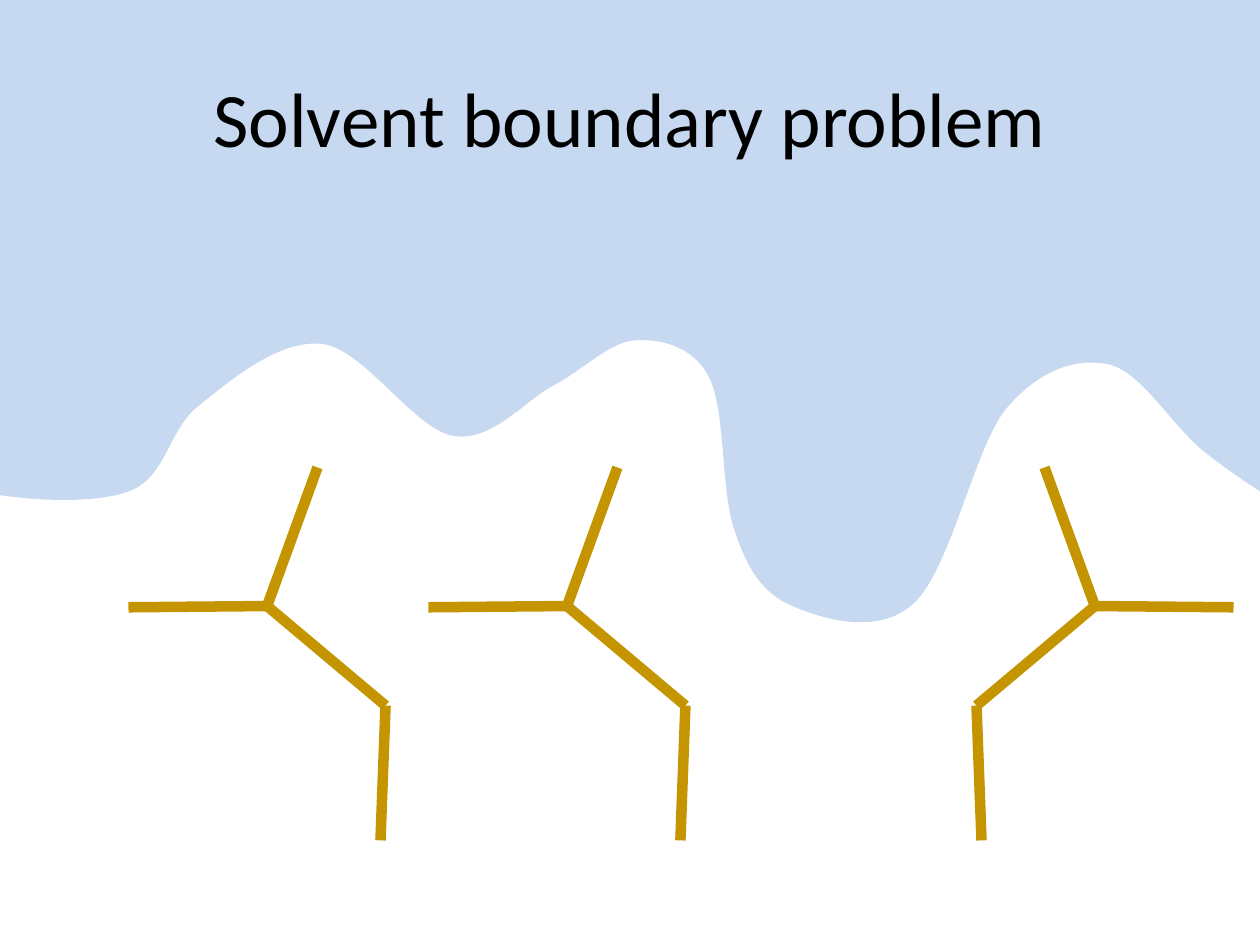
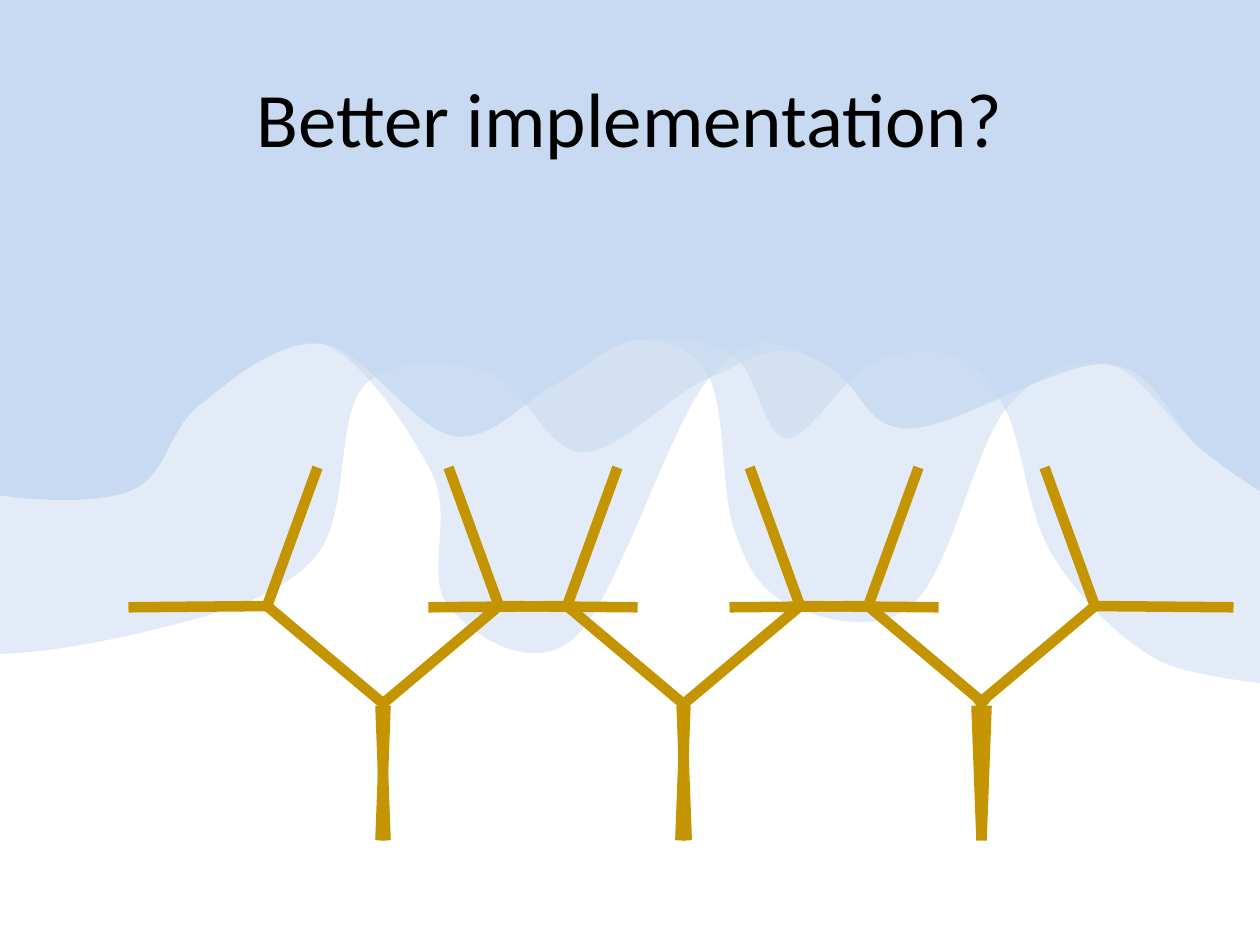
from dataclasses import dataclass

import lxml.etree
import pptx
import pptx.dml.color
import pptx.enum.shapes
import pptx.enum.text
import pptx.oxml.ns
import pptx.util


@dataclass(frozen=True)
class Theme:
    solvent: str = "C6D9F1"
    bond: str = "C49500"
    ink: str = "000000"
    font: str = "Calibri"
    title_size: int = 44
    bond_width: int = 6


THEME = Theme()
COLUMNS, ROWS = 10, 7.5
CELL = pptx.util.Inches(1)

JOINT_ROW = 4.81
TIP, ARM, ELBOW, FOOT = (0.4, -1.1), (-1.1, 0.01), (0.94, 0.79), (0.9, 1.86)
RIGHT_FACING = (2.12, 4.5, 6.89)
LEFT_FACING = (3.96, 6.35, 8.69)

SHORE_START = (0, 3.93)
LOW_SHORE_START = (0, 5.19)
LEFT_SHORE = [
    (0.35, 3.98, 0.78, 3.99, 1.02, 3.9),
    (1.33, 3.79, 1.33, 3.4, 1.59, 3.21),
]
LEFT_HUMPS = [
    (1.84, 3.01, 2.22, 2.69, 2.56, 2.73),
    (2.89, 2.77, 3.29, 3.41, 3.6, 3.46),
    (3.91, 3.51, 4.17, 3.17, 4.41, 3.05),
]
RIGHT_HUMPS = [
    (6.9, 3.09, 6.83, 3.39, 7.21, 3.4),
    (7.59, 3.4, 8.4, 2.86, 8.79, 2.89),
    (9.18, 2.92, 9.28, 3.35, 9.54, 3.57),
]
RIGHT_SHORE = [(9.65, 3.66, 9.83, 3.79, 10, 3.9)]

DIP_AT_RIGHT_GAP = LEFT_SHORE + LEFT_HUMPS + [
    (4.65, 2.92, 4.84, 2.71, 5.05, 2.7),
    (5.25, 2.69, 5.51, 2.75, 5.63, 3),
    (5.76, 3.25, 5.72, 3.9, 5.83, 4.21),
    (5.93, 4.51, 6.05, 4.71, 6.29, 4.81),
    (6.52, 4.91, 6.97, 5.05, 7.25, 4.79),
    (7.54, 4.53, 7.73, 3.57, 7.98, 3.25),
    (8.24, 2.94, 8.53, 2.84, 8.79, 2.89),
    (9.05, 2.94, 9.28, 3.35, 9.54, 3.57),
] + RIGHT_SHORE
DIP_AT_LEFT_EDGE = [
    (0.4, 5.18, 0.94, 5.07, 1.29, 4.98),
    (1.77, 4.86, 2.24, 4.73, 2.51, 4.41),
    (2.78, 4.09, 2.66, 3.31, 2.89, 3.06),
    (3.12, 2.82, 3.58, 2.87, 3.87, 2.95),
    (4.16, 3.04, 4.33, 3.58, 4.62, 3.59),
    (4.91, 3.6, 5.32, 3.12, 5.63, 3),
    (5.95, 2.88, 6.12, 2.66, 6.51, 2.87),
] + RIGHT_HUMPS + RIGHT_SHORE
DIP_AT_LEFT_GAP = LEFT_SHORE + [
    (1.84, 3.01, 2.25, 2.64, 2.56, 2.73),
    (2.86, 2.82, 3.26, 3.42, 3.43, 3.76),
    (3.6, 4.11, 3.37, 4.59, 3.56, 4.81),
    (3.74, 5.03, 4.21, 5.37, 4.56, 5.06),
    (4.9, 4.76, 5.31, 3.37, 5.63, 3),
    (5.96, 2.63, 6.12, 2.66, 6.51, 2.87),
] + RIGHT_HUMPS + RIGHT_SHORE
DIP_AT_RIGHT_EDGE = LEFT_SHORE + LEFT_HUMPS + [
    (4.65, 2.92, 4.81, 2.74, 5.05, 2.7),
    (5.28, 2.66, 5.61, 2.68, 5.81, 2.81),
    (6.01, 2.94, 6.06, 3.46, 6.24, 3.48),
    (6.42, 3.49, 6.67, 3.02, 6.89, 2.9),
    (7.1, 2.79, 7.34, 2.75, 7.52, 2.81),
    (7.71, 2.87, 7.85, 2.99, 7.98, 3.25),
    (8.12, 3.52, 8.15, 4.07, 8.35, 4.4),
    (8.55, 4.73, 8.87, 5.06, 9.19, 5.24),
    (9.37, 5.33, 9.73, 5.39, 10, 5.42),
]


def grid(*lengths):
    return [round(length * CELL) for length in lengths]


def rgb(code):
    return pptx.dml.color.RGBColor.from_string(code)


def qn(tag):
    return pptx.oxml.ns.qn(tag)


def bend_shoreline(solvent):
    sides = list(solvent._element.spPr.iter(qn("a:lnTo")))[1:-1]
    for first in range(0, len(sides), 3):
        curve = lxml.etree.Element(qn("a:cubicBezTo"))
        sides[first].addprevious(curve)
        for side in sides[first:first + 3]:
            curve.append(side[0])
            side.getparent().remove(side)


def add_solvent(slide, curves, start=SHORE_START, opacity=100):
    shoreline = [start]
    for curve in curves:
        shoreline += zip(curve[::2], curve[1::2])
    shoreline.append((COLUMNS, 0))
    outline = slide.shapes.build_freeform(0, 0, scale=1.0)
    outline.add_line_segments([grid(*point) for point in shoreline], close=True)
    solvent = outline.convert_to_shape()
    bend_shoreline(solvent)
    solvent.shadow.inherit = False
    solvent.line.fill.background()
    solvent.fill.solid()
    solvent.fill.fore_color.rgb = rgb(THEME.solvent)
    if opacity < 100:
        color = solvent._element.spPr.find(".//" + qn("a:srgbClr"))
        alpha = lxml.etree.SubElement(color, qn("a:alpha"))
        alpha.set("val", str(opacity * 1000))


def add_text(slide, text, *, area, size, color=THEME.ink, font=THEME.font,
             align=pptx.enum.text.PP_ALIGN.CENTER,
             anchor=pptx.enum.text.MSO_ANCHOR.MIDDLE):
    frame = slide.shapes.add_textbox(*grid(*area)).text_frame
    frame.word_wrap = True
    frame.vertical_anchor = anchor
    paragraph = frame.paragraphs[0]
    paragraph.text = text
    paragraph.alignment = align
    paragraph.font.name = font
    paragraph.font.size = pptx.util.Pt(size)
    paragraph.font.color.rgb = rgb(color)


def add_title(slide, text):
    add_text(slide, text, area=(0.5, 0.3, COLUMNS - 1, 1.25), size=THEME.title_size)


def add_bond(molecule, start, end):
    bond = molecule.shapes.add_connector(
        pptx.enum.shapes.MSO_CONNECTOR.STRAIGHT, *grid(*start, *end))
    bond.line.color.rgb = rgb(THEME.bond)
    bond.line.width = pptx.util.Pt(THEME.bond_width)
    lxml.etree.SubElement(bond._element.spPr, qn("a:effectLst"))


def add_molecule(slide, joint_column, facing):
    def place(offset):
        return joint_column + facing * offset[0], JOINT_ROW + offset[1]

    molecule = slide.shapes.add_group_shape()
    joint = (0, 0)
    for start, end in ((FOOT, ELBOW), (joint, ELBOW), (joint, TIP), (joint, ARM)):
        add_bond(molecule, place(start), place(end))


def add_molecules(slide, right_facing, left_facing):
    for facing, columns in ((-1, left_facing), (1, right_facing)):
        for column in columns:
            add_molecule(slide, column, facing)


def build_boundary_problem(slide):
    add_solvent(slide, DIP_AT_RIGHT_GAP)
    add_title(slide, "Solvent boundary problem")
    add_molecules(slide, RIGHT_FACING[:2], LEFT_FACING[-1:])


def build_better_implementation(slide):
    add_solvent(slide, DIP_AT_LEFT_EDGE, start=LOW_SHORE_START, opacity=50)
    for curves in (DIP_AT_RIGHT_GAP, DIP_AT_LEFT_GAP, DIP_AT_RIGHT_EDGE):
        add_solvent(slide, curves, opacity=50)
    add_title(slide, "Better implementation?")
    add_molecules(slide, RIGHT_FACING, LEFT_FACING)


def main():
    deck = pptx.Presentation()
    deck.slide_width, deck.slide_height = grid(COLUMNS, ROWS)
    blank = deck.slide_layouts[6]
    for build in (build_boundary_problem, build_better_implementation):
        build(deck.slides.add_slide(blank))
    deck.save("out.pptx")


if __name__ == "__main__":
    main()
